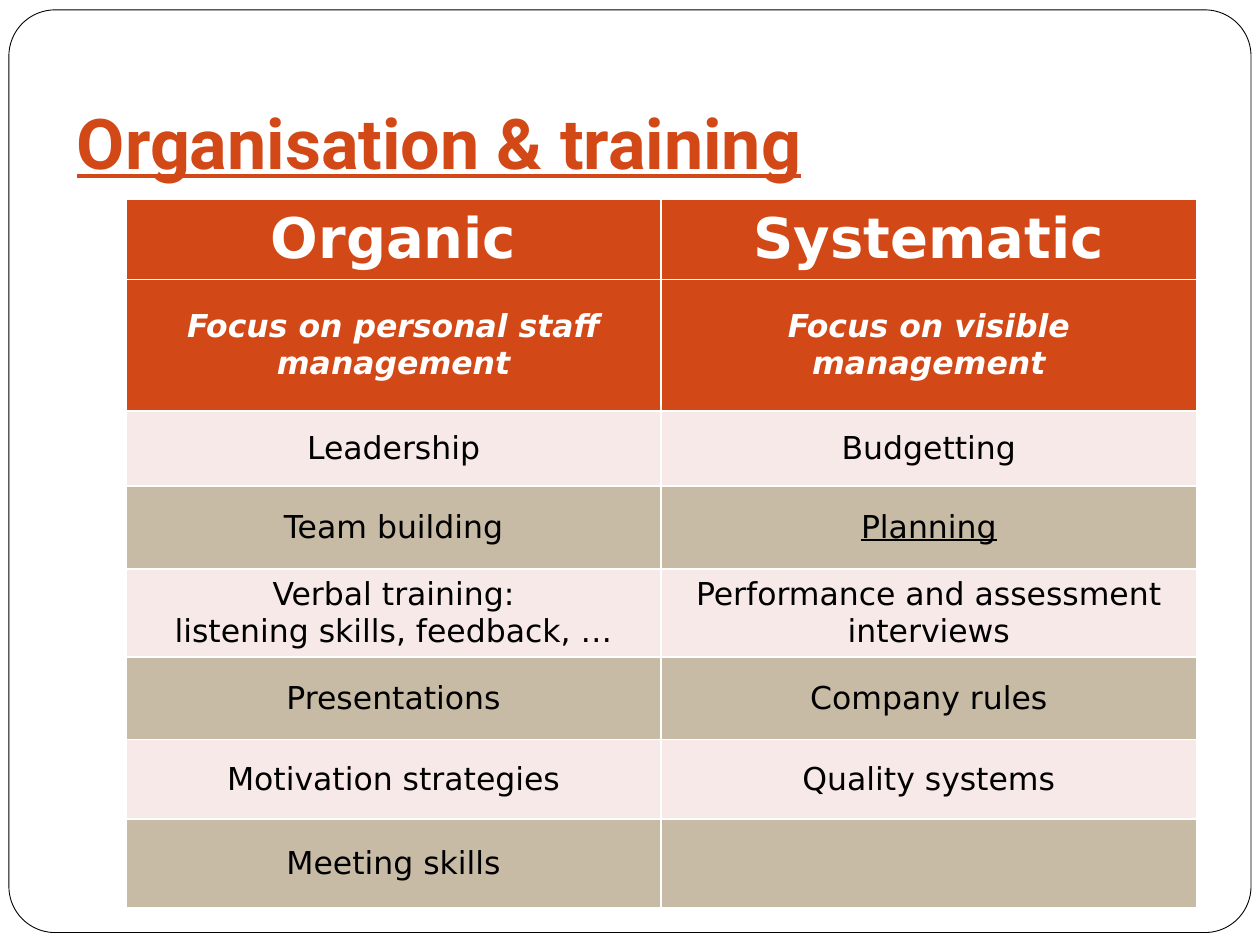
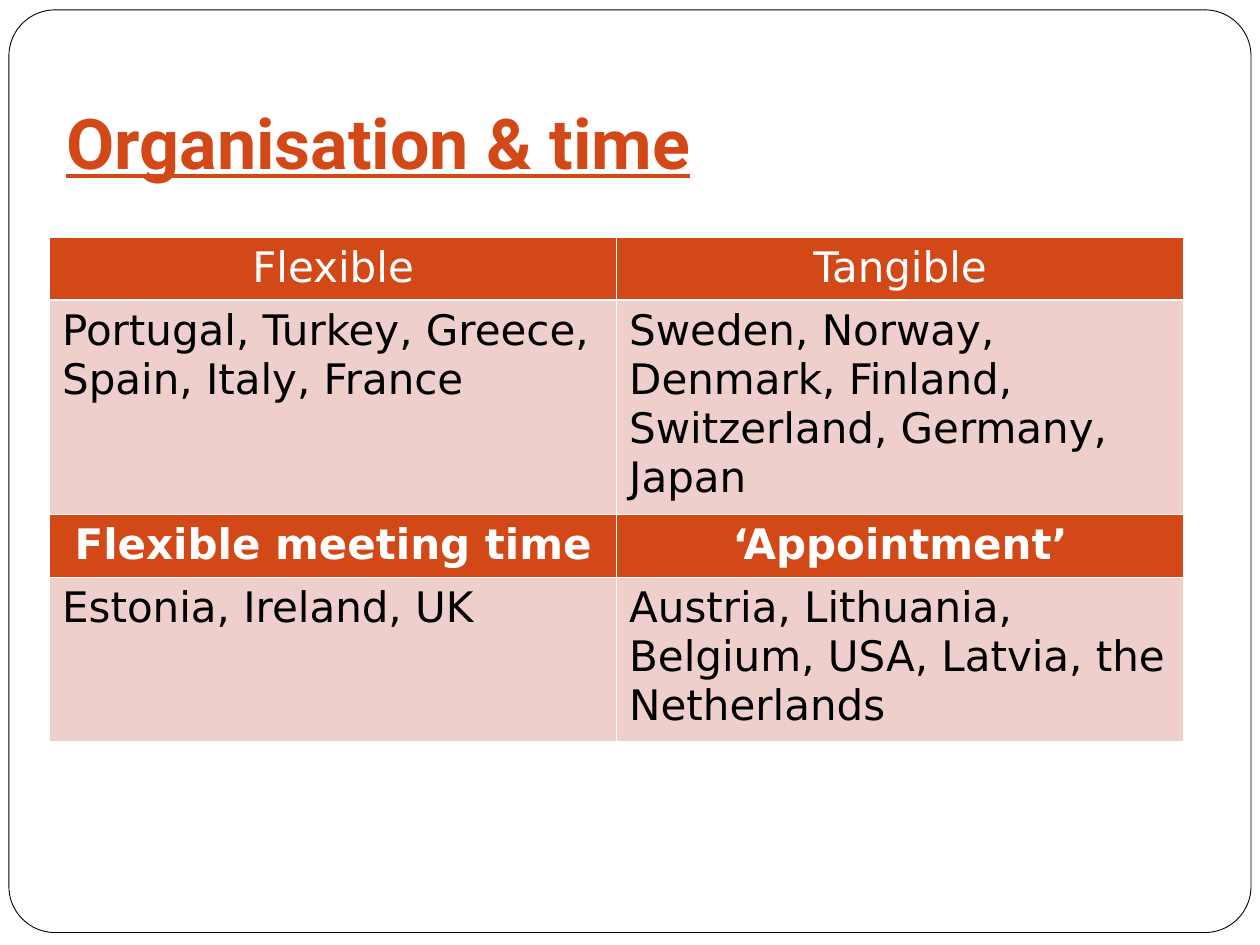
from dataclasses import dataclass

from lxml import etree
from pptx import Presentation
from pptx.dml.color import RGBColor
from pptx.enum.shapes import MSO_SHAPE
from pptx.enum.text import MSO_ANCHOR, PP_ALIGN
from pptx.oxml.ns import qn
from pptx.slide import Slide
from pptx.table import _Cell
from pptx.text.text import TextFrame
from pptx.util import Cm, Pt

# Shared colours and fonts
ORANGE = RGBColor(0xD3, 0x48, 0x17)
PALE_PINK = RGBColor(0xF7, 0xE9, 0xE8)
PINK = RGBColor(0xEF, 0xCF, 0xCC)
SAND = RGBColor(0xC7, 0xBB, 0xA6)
WHITE = RGBColor(0xFF, 0xFF, 0xFF)
BLACK = RGBColor(0x00, 0x00, 0x00)
TITLE_FONT = "Roboto"
TABLE_FONT = "DejaVu Sans"

TITLE_FORMAT = {"name": TITLE_FONT, "size": Pt(40), "bold": True, "underline": True}
TITLE_TOP, TITLE_BOTTOM, TITLE_RIGHT = 0.76, 3.94, 24.13


@dataclass(frozen=True)
class RowStyle:
    size: int
    fill: RGBColor
    color: RGBColor = BLACK
    bold: bool = False
    italic: bool = False
    align: PP_ALIGN = PP_ALIGN.CENTER


@dataclass(frozen=True)
class Row:
    height: float
    texts: tuple[str, str]
    style: RowStyle


@dataclass(frozen=True)
class TableSlide:
    title: str
    title_left: float
    table_left: float
    table_top: float
    column_width: float
    anchor: MSO_ANCHOR
    rows: tuple[Row, ...]
    underlined: tuple[str, ...] = ()


# Row styles
HEADING = RowStyle(32, ORANGE, WHITE, bold=True)
FOCUS = RowStyle(18, ORANGE, WHITE, bold=True, italic=True)
LIGHT_ROW = RowStyle(18, PALE_PINK)
DARK_ROW = RowStyle(18, SAND)
TIME_HEADING = RowStyle(24, ORANGE, WHITE)
TIME_SUBHEADING = RowStyle(24, ORANGE, WHITE, bold=True)
COUNTRIES = RowStyle(24, PINK, align=PP_ALIGN.LEFT)

# Slide contents
TRAINING = TableSlide(
    "Organisation & training", 1.3, 2.54, 4.02, 10.79, MSO_ANCHOR.MIDDLE,
    (
        Row(1.56, ("Organic", "Systematic"), HEADING),
        Row(2.66, ("Focus on personal staff management", "Focus on visible management"), FOCUS),
        Row(1.51, ("Leadership", "Budgetting"), LIGHT_ROW),
        Row(1.67, ("Team building", "Planning"), DARK_ROW),
        Row(1.71, ("Verbal training:\nlistening skills, feedback, …",
                   "Performance and assessment interviews"), LIGHT_ROW),
        Row(1.66, ("Presentations", "Company rules"), DARK_ROW),
        Row(1.6, ("Motivation strategies", "Quality systems"), LIGHT_ROW),
        Row(1.8, ("Meeting skills", ""), DARK_ROW),
    ),
    underlined=("Planning",),
)
TIME = TableSlide(
    "Organisation & time", 1.09, 1.0, 4.78, 11.43, MSO_ANCHOR.TOP,
    (
        Row(1.23, ("Flexible", "Tangible"), TIME_HEADING),
        Row(4.2, ("Portugal, Turkey, Greece, Spain, Italy, France",
                  "Sweden, Norway, Denmark, Finland, Switzerland, Germany, Japan"), COUNTRIES),
        Row(1.23, ("Flexible meeting time", "‘Appointment’"), TIME_SUBHEADING),
        Row(3.2, ("Estonia, Ireland, UK",
                  "Austria, Lithuania, Belgium, USA, Latvia, the Netherlands"), COUNTRIES),
    ),
)


def format_text(frame: TextFrame, formats: dict, color: RGBColor, align: PP_ALIGN) -> None:
    for paragraph in frame.paragraphs:
        paragraph.alignment = align
        for run in paragraph.runs:
            for attribute, value in formats.items():
                setattr(run.font, attribute, value)
            run.font.color.rgb = color


def add_frame(slide: Slide) -> None:
    """Draw the rounded outline around the page."""
    shape = slide.shapes.add_shape(
        MSO_SHAPE.ROUNDED_RECTANGLE, Cm(0.18), Cm(0.2), Cm(25.04), Cm(18.6))
    shape.adjustments[0] = 0.05
    shape.shadow.inherit = False
    shape.fill.solid()
    shape.fill.fore_color.rgb = WHITE
    shape.line.color.rgb = BLACK
    shape.line.width = Pt(0.5)


def add_title(slide: Slide, text: str, left: float) -> None:
    shape = slide.shapes.add_textbox(
        Cm(left), Cm(TITLE_TOP), Cm(TITLE_RIGHT - left), Cm(TITLE_BOTTOM - TITLE_TOP))
    frame = shape.text_frame
    frame.text = text
    frame.word_wrap = True
    frame.vertical_anchor = MSO_ANCHOR.BOTTOM
    frame.margin_bottom = Cm(0.25)
    format_text(frame, TITLE_FORMAT, ORANGE, PP_ALIGN.LEFT)


def add_borders(cell: _Cell) -> None:
    properties = cell._tc.get_or_add_tcPr()
    for side in ("lnL", "lnR", "lnT", "lnB"):
        line = etree.SubElement(properties, qn(f"a:{side}"), w=str(Pt(1)))
        fill = etree.SubElement(line, qn("a:solidFill"))
        etree.SubElement(fill, qn("a:srgbClr"), val=str(WHITE))


def fill_cell(cell: _Cell, text: str, style: RowStyle, underline: bool) -> None:
    add_borders(cell)
    cell.fill.solid()
    cell.fill.fore_color.rgb = style.fill
    cell.text_frame.text = text
    formats = {"name": TABLE_FONT, "size": Pt(style.size), "bold": style.bold,
               "italic": style.italic, "underline": underline}
    format_text(cell.text_frame, formats, style.color, style.align)


def add_two_column_table(slide: Slide, content: TableSlide) -> None:
    total_height = sum(row.height for row in content.rows)
    table = slide.shapes.add_table(
        len(content.rows), 2, Cm(content.table_left), Cm(content.table_top),
        Cm(2 * content.column_width), Cm(total_height)).table
    table.first_row = False
    table.horz_banding = False
    for row_index, row in enumerate(content.rows):
        table.rows[row_index].height = Cm(row.height)
        for column_index, text in enumerate(row.texts):
            cell = table.cell(row_index, column_index)
            cell.vertical_anchor = content.anchor
            fill_cell(cell, text, row.style, text in content.underlined)


def main() -> None:
    presentation = Presentation()
    presentation.slide_width = Cm(25.4)
    presentation.slide_height = Cm(19.05)
    blank_layout = presentation.slide_layouts[6]
    for content in (TRAINING, TIME):
        slide = presentation.slides.add_slide(blank_layout)
        add_frame(slide)
        add_title(slide, content.title, content.title_left)
        add_two_column_table(slide, content)
    presentation.save("out.pptx")


if __name__ == "__main__":
    main()
